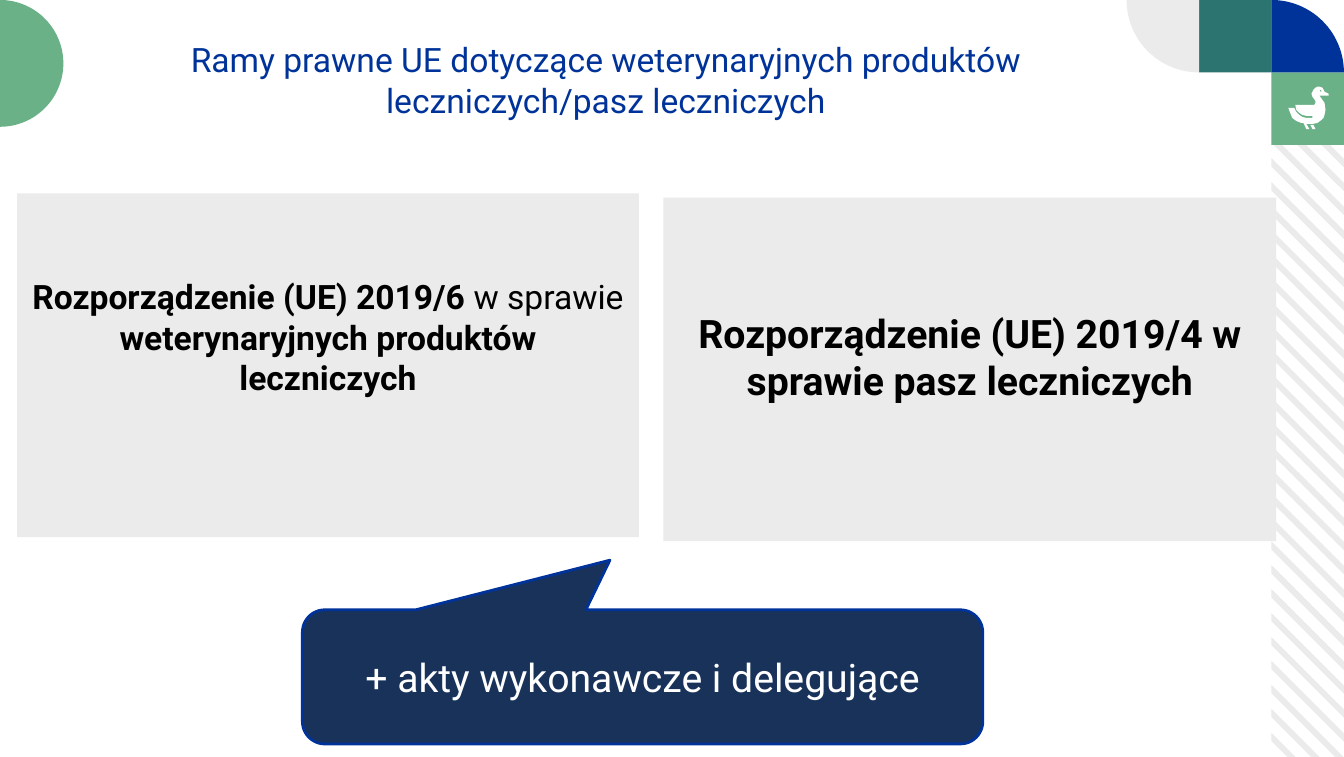
import math
from pptx import Presentation
from pptx import util as u
from pptx.dml.color import RGBColor
from pptx.enum import shapes, text

WIDTH, HEIGHT = 960, 540.7
FONT = "Roboto"
GREY, TEAL, GREEN, BLUE, NAVY = "ECEBEB", "2C7470", "6BB188", "003399", "18325A"
BLACK, WHITE = "000000", "FFFFFF"

TITLE = "Ramy prawne UE dotyczące weterynaryjnych produktów leczniczych/pasz leczniczych"
# place (left, top, width, height), bottom inset, size, runs (text, bold)
PANELS = [
    ((12.2, 138.2, 444.2, 245.5), 44.5, 24,
     [("Rozporządzenie (UE) 2019/6 ", True), ("w sprawie", False),
      (" weterynaryjnych produktów leczniczych", True)]),
    ((473.8, 141.1, 437.8, 245.5), 22.2, 28,
     [("Rozporządzenie (UE) 2019/4 w sprawie pasz leczniczych", True)]),
]
CALLOUT = [("+ akty wykonawcze i delegujące", False)]
CALLOUT_PLACE = (216, 435.6, 486, 95.8)
CALLOUT_TAIL = (-0.048, -0.87, 0.167)

TILE = 51.75
STRIPE_STEP, STRIPE_DEPTH, STRIPE_FIRST, STRIPE_COUNT = 17.1, 6, 61.74, 28

# Duck contours on a grid of small cells
DUCK_LEFT, DUCK_TOP, DUCK_CELL = 920.2, 61.9, 0.72
DUCK = [
    [(40, 7), (36, 5), (35, 3), (34, 1), (31, 0), (29, 0), (27, 1), (25, 3),
     (24, 5), (23, 7), (24, 10), (27, 14), (27, 16), (26, 18), (7, 18), (8, 23),
     (11, 26), (14, 28), (18, 29), (24, 29), (24, 31), (18, 31), (14, 30),
     (11, 28), (8, 25), (6, 21), (0, 21), (2, 26), (4, 31), (8, 34), (13, 36),
     (15, 36), (18, 42), (21, 42), (18, 37), (24, 37), (29, 36), (33, 33),
     (35, 31), (36, 28), (37, 23), (36, 16), (31, 9), (40, 9)],
    [(31, 4), (32, 3), (33, 4), (33, 5), (32, 5)],
    [(27, 42), (25, 38), (22, 38), (24, 42)],
]


def color(value):
    return RGBColor.from_string(value)


def paint(shape, fill):
    shape.shadow.inherit = False
    shape.fill.solid()
    shape.fill.fore_color.rgb = color(fill)
    shape.line.fill.background()


def add_outline(slide, contours, fill):
    """Draw closed contours, given in points, as one filled shape."""
    contours = [[(u.Pt(x), u.Pt(y)) for x, y in contour] for contour in contours]
    builder = slide.shapes.build_freeform(*contours[0][0])
    for index, contour in enumerate(contours):
        if index:
            builder.move_to(*contour[0])
        builder.add_line_segments(contour[1:], close=True)
    paint(builder.convert_to_shape(), fill)


def add_sector(slide, center, radius, start, end, fill):
    """Draw a circle sector between two angles, clockwise from the right."""
    angles = [math.radians(angle) for angle in range(start, end + 1, 3)]
    arc = [(center[0] + radius * math.cos(a), center[1] + radius * math.sin(a))
           for a in angles]
    add_outline(slide, [[center] + arc], fill)


def add_box(slide, kind, place, fill):
    box = slide.shapes.add_shape(kind, *map(u.Pt, place))
    paint(box, fill)
    return box


def write(frame, runs, size, ink, anchor=text.MSO_ANCHOR.MIDDLE):
    frame.word_wrap = True
    frame.auto_size = text.MSO_AUTO_SIZE.NONE
    frame.vertical_anchor = anchor
    para = frame.paragraphs[0]
    para.alignment = text.PP_ALIGN.CENTER
    for words, bold in runs:
        span = para.add_run()
        span.text = words
        span.font.name = FONT
        span.font.size = u.Pt(size)
        span.font.bold = bold
        span.font.color.rgb = color(ink)


def stripe(top, left, ceiling, floor):
    """Return a diagonal band clipped to the column below the tiles."""
    def edge(y):
        start, end = max(0, ceiling - y), min(TILE, floor - y)
        return [(left + start, y + start), (left + end, y + end)]
    return edge(top) + edge(top + STRIPE_DEPTH)[::-1]


def add_decoration(slide):
    columns = [WIDTH - TILE * count for count in (3, 2, 1)]
    right = columns[2]
    add_outline(slide, [stripe(STRIPE_FIRST + STRIPE_STEP * row, right, 2 * TILE, HEIGHT)
                        for row in range(STRIPE_COUNT)], GREY)
    rectangle = shapes.MSO_SHAPE.RECTANGLE
    add_box(slide, rectangle, (columns[1], 0, TILE, TILE), TEAL)
    add_box(slide, rectangle, (right, TILE, TILE, TILE), GREEN)
    add_sector(slide, (right, TILE), TILE, -90, 0, BLUE)
    add_sector(slide, (columns[1], 0), TILE, 90, 180, GREY)
    add_sector(slide, (0, 45.3), 45.3, -90, 90, GREEN)
    add_outline(slide, [[(DUCK_LEFT + x * DUCK_CELL, DUCK_TOP + y * DUCK_CELL)
                         for x, y in contour] for contour in DUCK], WHITE)


def main():
    deck = Presentation()
    deck.slide_width, deck.slide_height = u.Pt(WIDTH), u.Pt(HEIGHT)
    page = deck.slides.add_slide(deck.slide_layouts[5])
    add_decoration(page)

    title = page.shapes.title
    title.left, title.top, title.width, title.height = map(u.Pt, (79.2, 24.5, 707, 37.4))
    write(title.text_frame, [(TITLE, False)], 24, BLUE, text.MSO_ANCHOR.TOP)

    for place, inset, size, runs in PANELS:
        panel = add_box(page, shapes.MSO_SHAPE.RECTANGLE, place, GREY)
        panel.text_frame.margin_bottom = u.Pt(inset)
        write(panel.text_frame, runs, size, BLACK)

    callout = add_box(page, shapes.MSO_SHAPE.ROUNDED_RECTANGULAR_CALLOUT, CALLOUT_PLACE, NAVY)
    for index, value in enumerate(CALLOUT_TAIL):
        callout.adjustments[index] = value
    callout.line.color.rgb = color(BLUE)
    callout.line.width = u.Pt(2)
    write(callout.text_frame, CALLOUT, 28, WHITE)

    deck.save("out.pptx")


if __name__ == "__main__":
    main()
